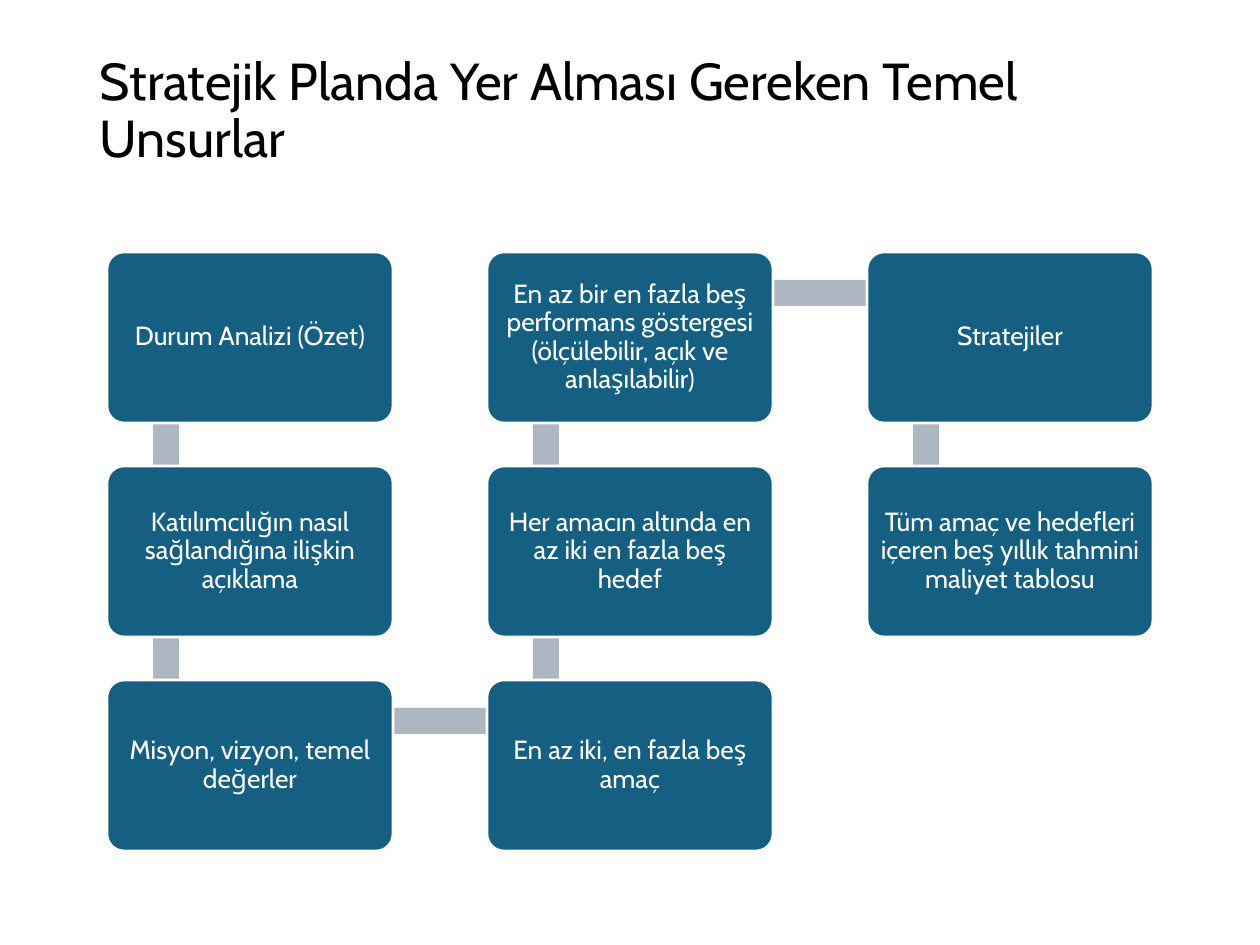
import pptx
import pptx.util
import pptx.dml.color
import pptx.enum.shapes
import pptx.enum.text

# Content: steps in flow order, each with its column and row
TITLE = "Stratejik Planda Yer Alması Gereken Temel Unsurlar"
STEPS = [
    ("Durum Analizi (Özet)", 0, 0),
    ("Katılımcılığın nasıl sağlandığına ilişkin açıklama", 0, 1),
    ("Misyon, vizyon, temel değerler", 0, 2),
    ("En az iki, en fazla beş amaç", 1, 2),
    ("Her amacın altında en az iki en fazla beş hedef", 1, 1),
    ("En az bir en fazla beş performans göstergesi "
     "(ölçülebilir, açık ve anlaşılabilir)", 1, 0),
    ("Stratejiler", 2, 0),
    ("Tüm amaç ve hedefleri içeren beş yıllık tahmini maliyet tablosu", 2, 1),
]

# Grid in px
LEFT, TOP = 107, 252
WIDE, HIGH = 286, 171
STEP_X, STEP_Y = 380, 214
LINK_X, LINK_Y = 59, 41
THICK = 26

FONT = "Cabin"
BLUE, GRAY, WHITE, BLACK = "156082", "ACB7C1", "FFFFFF", "000000"
KIND = pptx.enum.shapes.MSO_SHAPE
ALIGN = pptx.enum.text.PP_ALIGN
ANCHOR = pptx.enum.text.MSO_ANCHOR


def px(num):
    return pptx.util.Emu(round(num * 914400 / 126))


def color(code):
    return pptx.dml.color.RGBColor.from_string(code)


def write(shape, text, size, code, align, anchor, pad_x, pad_y):
    frame = shape.text_frame
    frame.word_wrap = True
    frame.vertical_anchor = anchor
    frame.margin_left = frame.margin_right = px(pad_x)
    frame.margin_top = frame.margin_bottom = px(pad_y)
    para = frame.paragraphs[0]
    para.alignment = align
    para.line_spacing = 0.9
    run = para.add_run()
    run.text = text
    run.font.name = FONT
    run.font.size = pptx.util.Pt(size)
    run.font.color.rgb = color(code)


def block(slide, kind, x, y, wide, high, fill):
    shape = slide.shapes.add_shape(kind, px(x), px(y), px(wide), px(high))
    shape.shadow.inherit = False
    shape.fill.solid()
    shape.fill.fore_color.rgb = color(fill)
    shape.line.fill.background()
    return shape


def corner(col, row):
    return LEFT + col * STEP_X, TOP + row * STEP_Y


def link(slide, start, end):
    (x1, y1), (x2, y2) = corner(*start), corner(*end)
    span = abs(x2 - x1) + abs(y2 - y1) - 1
    mid_x = (x1 + x2) / 2 + LINK_X
    mid_y = (y1 + y2) / 2 + LINK_Y
    bar = block(slide, KIND.RECTANGLE, mid_x - span / 2, mid_y - THICK / 2,
                span, THICK, GRAY)
    if y1 != y2:
        bar.rotation = 90 if y2 > y1 else 270


def card(slide, text, col, row):
    shape = block(slide, KIND.ROUNDED_RECTANGLE, *corner(col, row),
                  WIDE, HIGH, BLUE)
    shape.adjustments[0] = 0.1
    shape.line.color.rgb = color(WHITE)
    shape.line.width = pptx.util.Pt(1.5)
    write(shape, text, 15, WHITE, ALIGN.CENTER, ANCHOR.MIDDLE, 7, 7)


def main():
    deck = pptx.Presentation()
    deck.slide_width, deck.slide_height = px(1260), px(945)
    slide = deck.slides.add_slide(deck.slide_layouts[6])

    # Title
    title = slide.shapes.add_textbox(px(87), px(50), px(1086), px(183))
    write(title, TITLE, 29.7, BLACK, ALIGN.LEFT, ANCHOR.TOP, 13, 6)

    # Links lie behind the cards
    for start, end in zip(STEPS, STEPS[1:]):
        link(slide, start[1:], end[1:])
    for step in STEPS:
        card(slide, *step)

    deck.save("out.pptx")


if __name__ == "__main__":
    main()
